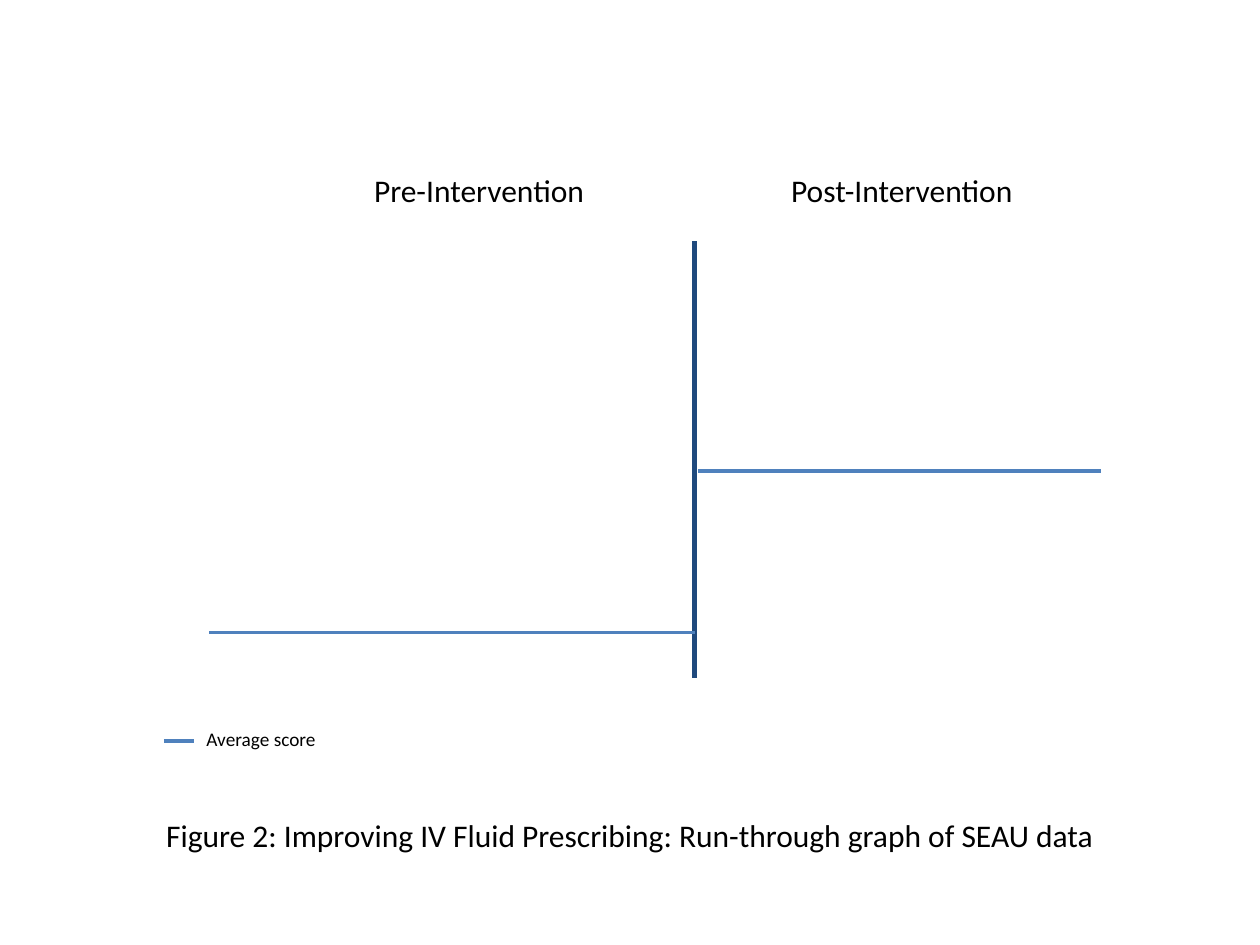
"""Build the run-through graph slide of pre- and post-intervention scores."""
from dataclasses import dataclass

import pptx
import pptx.dml.color
import pptx.enum.shapes
import pptx.enum.text
import pptx.oxml
import pptx.oxml.ns
import pptx.util

Inches = pptx.util.Inches


@dataclass(frozen=True)
class Theme:
    font: str = "Calibri"
    ink: str = "000000"
    paper: str = "FFFFFF"
    navy: str = "1F497D"
    blue: str = "4F81BD"
    large: int = 18
    small: int = 11
    thick: int = 3
    thin: int = 2


THEME = Theme()


def color(code):
    return pptx.dml.color.RGBColor.from_string(code)


def add_line(slide, start, end, tint, width):
    line = slide.shapes.add_connector(
        pptx.enum.shapes.MSO_CONNECTOR.STRAIGHT,
        *(Inches(value) for value in start + end))
    line.line.color.rgb = color(tint)
    line.line.width = pptx.util.Pt(width)
    props = line._element.spPr
    props.append(pptx.oxml.parse_xml(
        "<a:effectLst %s/>" % pptx.oxml.ns.nsdecls("a")))
    return line


def add_text(slide, box, words, size, align=pptx.enum.text.PP_ALIGN.LEFT):
    shape = slide.shapes.add_textbox(*(Inches(value) for value in box))
    frame = shape.text_frame
    frame.word_wrap = True
    frame.auto_size = pptx.enum.text.MSO_AUTO_SIZE.SHAPE_TO_FIT_TEXT
    para = frame.paragraphs[0]
    para.alignment = align
    run = para.add_run()
    run.text = words
    run.font.name = THEME.font
    run.font.size = pptx.util.Pt(size)
    run.font.color.rgb = color(THEME.ink)
    return shape


def add_graph(slide):
    add_line(slide, (5.51, 5.38), (5.51, 1.91), THEME.navy, THEME.thick)
    for left, words in ((2.87, "Pre-Intervention"), (6.18, "Post-Intervention")):
        add_text(slide, (left, 1.31, 2.05, 0.4), words, THEME.large)
    for left, right, level in ((1.66, 5.52, 5.02), (5.54, 8.74, 3.74)):
        add_line(slide, (left, level), (right, level), THEME.blue, THEME.thin)


def add_legend(slide):
    add_line(slide, (1.3, 5.88), (1.54, 5.88), THEME.blue, THEME.thin)
    add_text(slide, (1.54, 5.72, 1.1, 0.29), "Average score", THEME.small)


def add_caption(slide):
    caption = add_text(
        slide, (1.14, 6.43, 7.72, 0.4),
        "Figure 2: Improving IV Fluid Prescribing: Run-through graph of SEAU data",
        THEME.large, pptx.enum.text.PP_ALIGN.CENTER)
    caption.fill.solid()
    caption.fill.fore_color.rgb = color(THEME.paper)


def main():
    deck = pptx.Presentation()
    deck.slide_width, deck.slide_height = Inches(10), Inches(7.5)
    slide = deck.slides.add_slide(deck.slide_layouts[6])
    add_graph(slide)
    add_legend(slide)
    add_caption(slide)
    deck.save("out.pptx")


if __name__ == "__main__":
    main()
